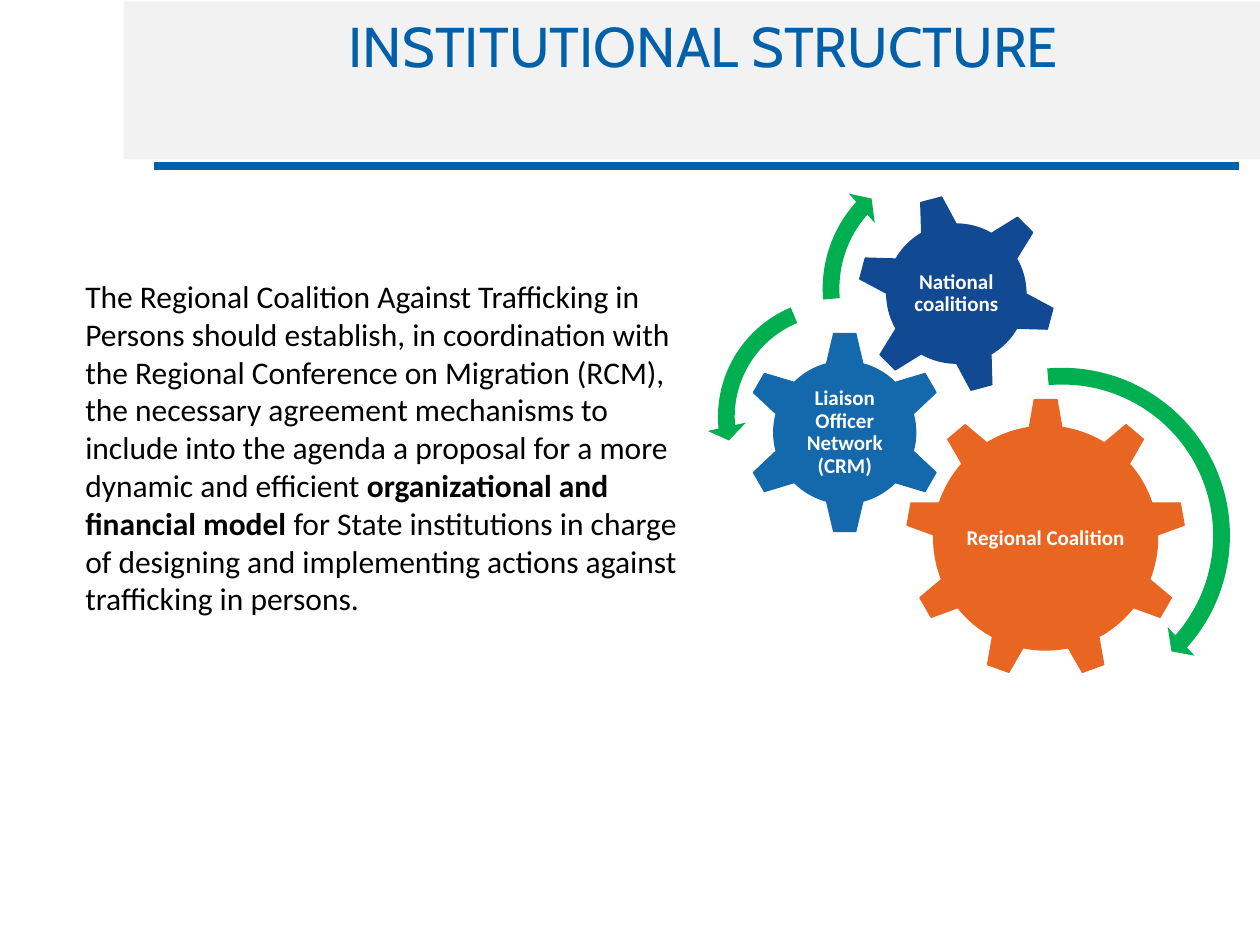
"""Build the institutional structure slide: a paragraph beside three turning gears."""
from lxml.etree import SubElement
from pptx import Presentation
from pptx.dml.color import RGBColor
from pptx.enum.shapes import MSO_CONNECTOR, MSO_SHAPE
from pptx.enum.text import MSO_ANCHOR, PP_ALIGN
from pptx.oxml.ns import qn
from pptx.util import Cm, Pt

COLORS = {
    "title": "0061AA", "band": "F2F2F2", "text": "000000", "label": "FFFFFF",
    "orange": "E96622", "blue": "1468AC", "navy": "114A92", "arrow": "00B050",
}
TITLE = "INSTITUTIONAL STRUCTURE"
BODY = [
    ("The Regional Coalition Against Trafficking in Persons should establish, in "
     "coordination with the Regional Conference on Migration (RCM), the necessary "
     "agreement mechanisms to include into the agenda a proposal for a more dynamic "
     "and efficient ", False),
    ("organizational and financial model ", True),
    ("for State institutions in charge of designing and implementing actions against "
     "trafficking in persons.", False),
]
# label, shape, color, centre x, centre y, size, rotation, label width, label height
GEARS = [
    ("Regional Coalition", MSO_SHAPE.GEAR_9, "orange", 21.08, 10.85, 5.64, 0, 3.35, 2.9),
    ("Liaison Officer Network (CRM)", MSO_SHAPE.GEAR_6, "blue", 17.03, 8.72, 4.09, 0, 2.03, 2.01),
    ("National coalitions", MSO_SHAPE.GEAR_6, "navy", 19.28, 5.92, 4.01, 345, 2.26, 2.26),
]
# shape, left, top, size, band %, head angle, end angle, start angle, head %
ARROWS = [
    (MSO_SHAPE.CIRCULAR_ARROW, 17.81, 7.19, 7.21, 4.69, 4.98, 41.71, 264.84, 5.47),
    (MSO_SHAPE.LEFT_CIRCULAR_ARROW, 14.25, 5.79, 5.23, 6.45, 7.17, 174.82, 247.3, 7.53),
    (MSO_SHAPE.CIRCULAR_ARROW, 16.36, 3, 5.64, 5.98, 6.57, 221.9, 175.14, 6.98),
]


def rgb(name):
    return RGBColor.from_string(COLORS[name])


def set_font(font, name, size, color, bold=None):
    font.name, font.size, font.bold = name, Pt(size), bold
    font.color.rgb = rgb(color)


def set_insets(tf, left, top, right, bottom):
    tf.margin_left, tf.margin_top = Cm(left), Cm(top)
    tf.margin_right, tf.margin_bottom = Cm(right), Cm(bottom)


def add_filled(shapes, kind, left, top, size, color):
    sp = shapes.add_shape(kind, Cm(left), Cm(top), Cm(size), Cm(size))
    sp.shadow.inherit = False
    sp.fill.solid()
    sp.fill.fore_color.rgb = rgb(color)
    sp.line.fill.background()
    return sp


def add_title(s):
    sp = s.shapes.title
    sp.left, sp.top, sp.width, sp.height = Cm(2.49), Cm(0.03), Cm(23.19), Cm(3.18)
    sp.fill.solid()
    sp.fill.fore_color.rgb = rgb("band")
    tf = sp.text_frame
    tf.text = TITLE
    tf.vertical_anchor = MSO_ANCHOR.TOP
    set_insets(tf, 0.71, 0.51, 0.51, 0.13)
    p = tf.paragraphs[0]
    p.alignment, p.line_spacing = PP_ALIGN.CENTER, 0.75
    set_font(p.font, "Cabin", 32, "title", False)
    rule = s.shapes.add_connector(MSO_CONNECTOR.STRAIGHT, Cm(3.1), Cm(3.35), Cm(24.97), Cm(3.35))
    rule.line.color.rgb = rgb("title")
    rule.line.width = Pt(4.5)
    SubElement(rule._element.spPr, qn("a:effectLst"))


def add_body(s):
    tf = s.shapes.add_textbox(Cm(1.47), Cm(5.46), Cm(12.7), Cm(7.95)).text_frame
    tf.word_wrap = True
    p = tf.paragraphs[0]
    set_font(p.font, "Calibri", 18, "text")
    for text, bold in BODY:
        r = p.add_run()
        r.text = text
        set_font(r.font, "Calibri", 18, "text", bold)


def add_gear(shapes, label, kind, color, x, y, size, rotation, w, h):
    sp = add_filled(shapes, kind, x - size / 2, y - size / 2, size, color)
    sp.rotation = rotation
    sp.line.color.rgb = rgb(color)
    sp.line.width = Pt(0.75)
    tf = shapes.add_textbox(Cm(x - w / 2), Cm(y - h / 2), Cm(w), Cm(h)).text_frame
    tf.word_wrap = True
    tf.vertical_anchor = MSO_ANCHOR.MIDDLE
    set_insets(tf, 0.05, 0.05, 0.05, 0.05)
    p = tf.paragraphs[0]
    p.text = label
    p.alignment, p.line_spacing = PP_ALIGN.CENTER, 0.9
    set_font(p.font, "Calibri", 12, "label", True)


def add_arrow(shapes, kind, left, top, size, band, head_angle, end, start, head):
    sp = add_filled(shapes, kind, left, top, size, "arrow")
    values = [band / 100, head_angle * 0.6, end * 0.6, start * 0.6, head / 100]
    for i, value in enumerate(values):
        sp.adjustments[i] = value


def main():
    prs = Presentation()
    prs.slide_width, prs.slide_height = Cm(25.4), Cm(19.05)
    s = prs.slides.add_slide(prs.slide_layouts[5])
    add_title(s)
    group = s.shapes.add_group_shape()
    for gear in GEARS:
        add_gear(group.shapes, *gear)
    for arrow in ARROWS:
        add_arrow(group.shapes, *arrow)
    add_body(s)
    prs.save("out.pptx")


if __name__ == "__main__":
    main()
